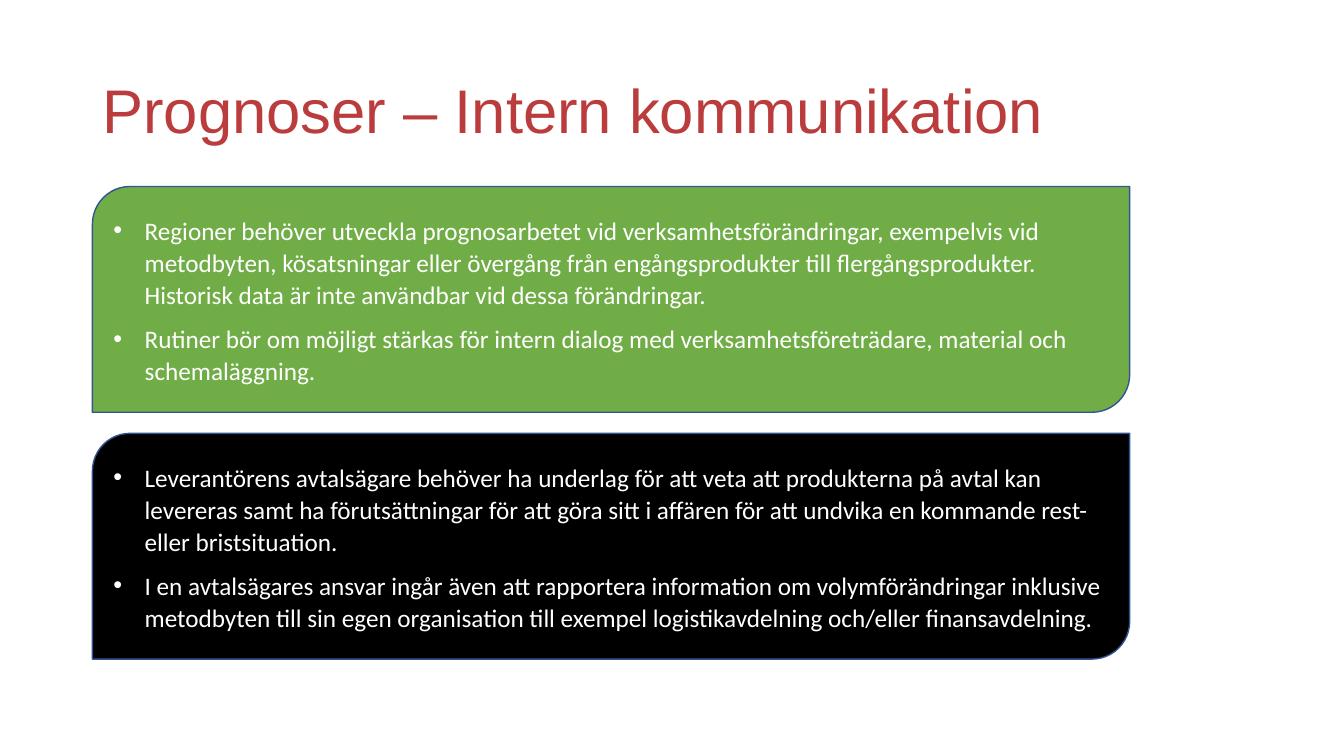
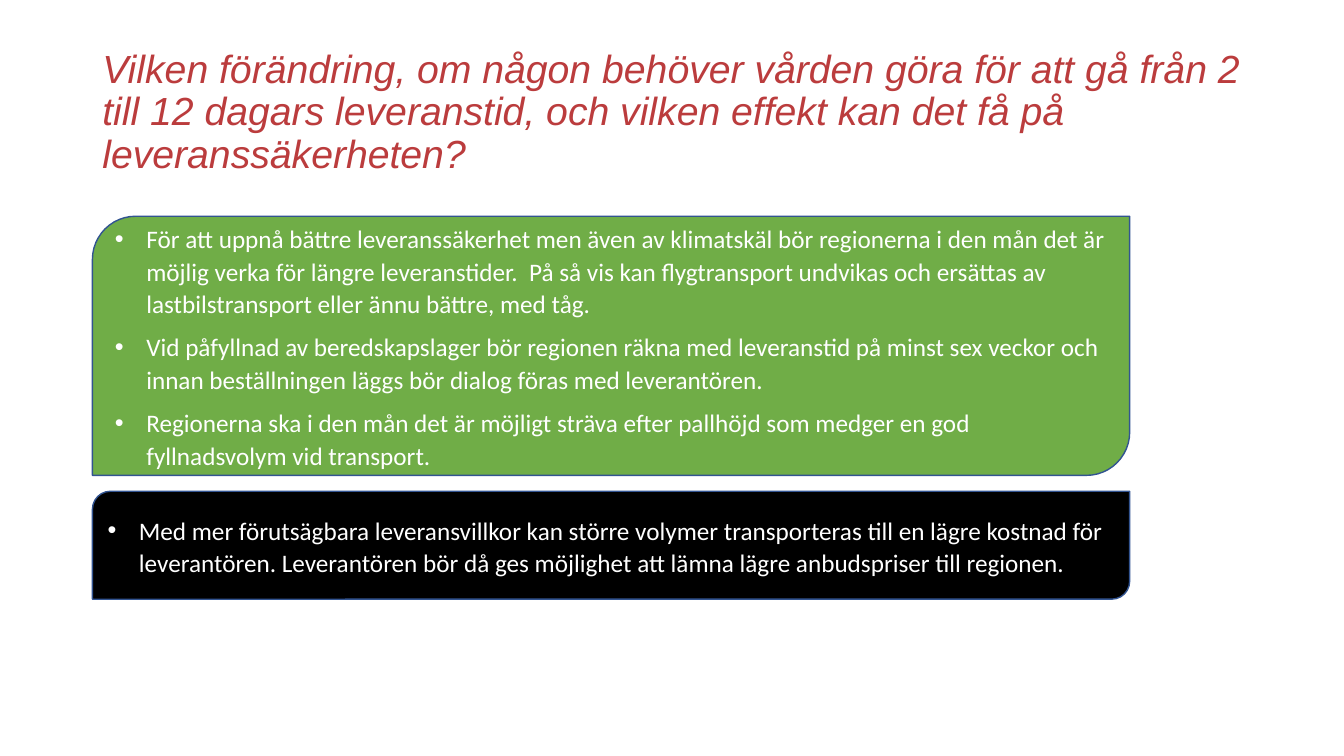
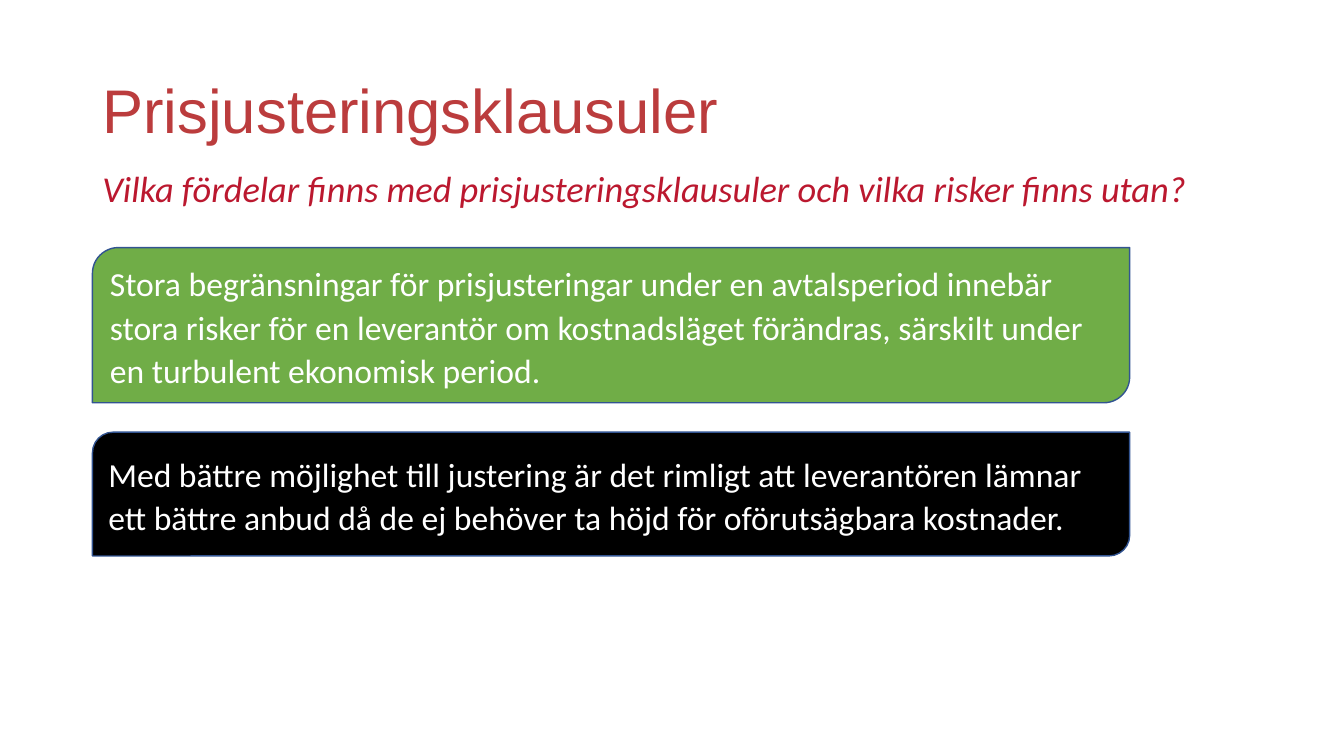
from dataclasses import dataclass
from typing import Any

from lxml import etree
from pptx import Presentation
from pptx.dml.color import RGBColor
from pptx.enum.shapes import MSO_SHAPE
from pptx.enum.text import MSO_ANCHOR, PP_ALIGN
from pptx.oxml.ns import qn
from pptx.util import Cm, Pt

PANEL_SHAPE = MSO_SHAPE.ROUND_2_DIAG_RECTANGLE
MIDDLE = MSO_ANCHOR.MIDDLE
LEFT = PP_ALIGN.LEFT

COLORS = {
    "title": "BB3C3D",
    "subtitle": "BB182F",
    "green": "70AD47",
    "black": "000000",
    "outline": "325491",
    "white": "FFFFFF",
}

MARGIN = 2.33
TITLE_WIDTH = 29.21
TITLE_HEIGHT = 3.68
PANEL_WIDTH = 26.14
BULLET_INDENT = Cm(0.79)

FRAME_FORMAT = {"word_wrap": True, "vertical_anchor": MIDDLE}
TITLE_SPACING = {"alignment": LEFT, "line_spacing": 0.9}
SUBTITLE_SPACING = {"alignment": LEFT, "line_spacing": 1.07, "space_before": Pt(2)}
PANEL_SPACING = {"alignment": LEFT, "line_spacing": 1.07, "space_after": Pt(8)}

SUBTITLE_FONT = {"name": "Calibri", "size": Pt(26), "italic": True}


@dataclass(frozen=True)
class Box:
    """Place and size in centimetres."""
    left: float
    top: float
    width: float
    height: float

    def lengths(self) -> list[Cm]:
        return [Cm(value) for value in (self.left, self.top, self.width, self.height)]


@dataclass(frozen=True)
class Panel:
    fill: str
    top: float
    height: float
    texts: list[str]
    size: float = 18
    bulleted: bool = True


@dataclass(frozen=True)
class SlideContent:
    title: str
    panels: list[Panel]
    title_size: float = 44
    title_italic: bool = False
    subtitle: str = ""


TITLE_BOX = Box(MARGIN, 1.01, TITLE_WIDTH, TITLE_HEIGHT)
SUBTITLE_BOX = Box(MARGIN, 2.85, TITLE_WIDTH, TITLE_HEIGHT)

SLIDES = [
    SlideContent(
        title="Prognoser – Intern kommunikation",
        panels=[
            Panel("green", 4.7, 5.69, [
                "Regioner behöver utveckla prognosarbetet vid verksamhetsförändringar, "
                "exempelvis vid metodbyten, kösatsningar eller övergång från "
                "engångsprodukter till flergångsprodukter. Historisk data är inte "
                "användbar vid dessa förändringar.",
                "Rutiner bör om möjligt stärkas för intern dialog med "
                "verksamhetsföreträdare, material och schemaläggning.",
            ]),
            Panel("black", 10.92, 5.69, [
                "Leverantörens avtalsägare behöver ha underlag för att veta att "
                "produkterna på avtal kan levereras samt ha förutsättningar för att "
                "göra sitt i affären för att undvika en kommande rest- eller "
                "bristsituation.",
                "I en avtalsägares ansvar ingår även att rapportera information om "
                "volymförändringar inklusive metodbyten till sin egen organisation "
                "till exempel logistikavdelning och/eller finansavdelning.",
            ]),
        ],
    ),
    SlideContent(
        title="Vilken förändring, om någon behöver vården göra för att gå från 2 till "
              "12 dagars leveranstid, och vilken effekt kan det få på "
              "leveranssäkerheten?",
        title_size=28,
        title_italic=True,
        panels=[
            Panel("green", 5.45, 6.53, [
                "För att uppnå bättre leveranssäkerhet men även av klimatskäl bör "
                "regionerna i den mån det är möjlig verka för längre leveranstider.  "
                "På så vis kan flygtransport undvikas och ersättas av "
                "lastbilstransport eller ännu bättre, med tåg.",
                "Vid påfyllnad av beredskapslager bör regionen räkna med leveranstid "
                "på minst sex veckor och innan beställningen läggs bör dialog föras "
                "med leverantören.",
                "Regionerna ska i den mån det är möjligt sträva efter pallhöjd som "
                "medger en god fyllnadsvolym vid transport.",
            ]),
            Panel("black", 12.38, 2.72, [
                "Med mer förutsägbara leveransvillkor kan större volymer "
                "transporteras till en lägre kostnad för leverantören. Leverantören "
                "bör då ges möjlighet att lämna lägre anbudspriser till regionen.",
            ]),
        ],
    ),
    SlideContent(
        title="Prisjusteringsklausuler",
        subtitle="Vilka fördelar finns med prisjusteringsklausuler och vilka risker "
                 "finns utan?",
        panels=[
            Panel("green", 6.24, 3.91, [
                "Stora begränsningar för prisjusteringar under en avtalsperiod "
                "innebär stora risker för en leverantör om kostnadsläget förändras, "
                "särskilt under en turbulent ekonomisk period.",
            ], size=24, bulleted=False),
            Panel("black", 10.89, 3.12, [
                "Med bättre möjlighet till justering är det rimligt att leverantören "
                "lämnar ett bättre anbud då de ej behöver ta höjd för oförutsägbara "
                "kostnader.",
            ], size=24, bulleted=False),
        ],
    ),
]


def color(name: str) -> RGBColor:
    return RGBColor.from_string(COLORS[name])


def apply_format(target: Any, values: dict[str, Any]) -> None:
    for attribute, value in values.items():
        setattr(target, attribute, value)


def add_run(paragraph: Any, text: str, font: dict[str, Any], color_name: str) -> None:
    run = paragraph.add_run()
    run.text = text
    apply_format(run.font, font)
    run.font.color.rgb = color(color_name)


def add_bullet(paragraph: Any) -> None:
    """Give the paragraph a hanging bullet; spacing must already be set."""
    properties = paragraph._p.get_or_add_pPr()
    properties.set("marL", str(BULLET_INDENT))
    properties.set("indent", str(-BULLET_INDENT))
    etree.SubElement(properties, qn("a:buFont")).set("typeface", "Arial")
    etree.SubElement(properties, qn("a:buChar")).set("char", "•")


def add_text_box(slide: Any, box: Box, spacing: dict[str, Any]) -> Any:
    """Add a text box and return its first paragraph."""
    frame = slide.shapes.add_textbox(*box.lengths()).text_frame
    apply_format(frame, FRAME_FORMAT)
    paragraph = frame.paragraphs[0]
    apply_format(paragraph, spacing)
    return paragraph


def add_panel(slide: Any, panel: Panel) -> None:
    box = Box(MARGIN, panel.top, PANEL_WIDTH, panel.height)
    shape = slide.shapes.add_shape(PANEL_SHAPE, *box.lengths())
    shape.shadow.inherit = False
    shape.fill.solid()
    shape.fill.fore_color.rgb = color(panel.fill)
    shape.line.color.rgb = color("outline")
    shape.line.width = Pt(1)

    frame = shape.text_frame
    apply_format(frame, FRAME_FORMAT)
    font = {"name": "Calibri", "size": Pt(panel.size)}
    for index, text in enumerate(panel.texts):
        paragraph = frame.add_paragraph() if index else frame.paragraphs[0]
        apply_format(paragraph, PANEL_SPACING)
        if panel.bulleted:
            add_bullet(paragraph)
        add_run(paragraph, text, font, "white")


def add_slide(presentation: Any, content: SlideContent) -> None:
    slide = presentation.slides.add_slide(presentation.slide_layouts[6])
    title_font = {
        "name": "Arial",
        "size": Pt(content.title_size),
        "italic": content.title_italic,
    }
    title = add_text_box(slide, TITLE_BOX, TITLE_SPACING)
    add_run(title, content.title, title_font, "title")
    if content.subtitle:
        subtitle = add_text_box(slide, SUBTITLE_BOX, SUBTITLE_SPACING)
        add_run(subtitle, content.subtitle, SUBTITLE_FONT, "subtitle")
    for panel in content.panels:
        add_panel(slide, panel)


def main() -> None:
    presentation = Presentation()
    presentation.slide_width = Cm(33.87)
    presentation.slide_height = Cm(19.05)
    for content in SLIDES:
        add_slide(presentation, content)
    presentation.save("out.pptx")


if __name__ == "__main__":
    main()
